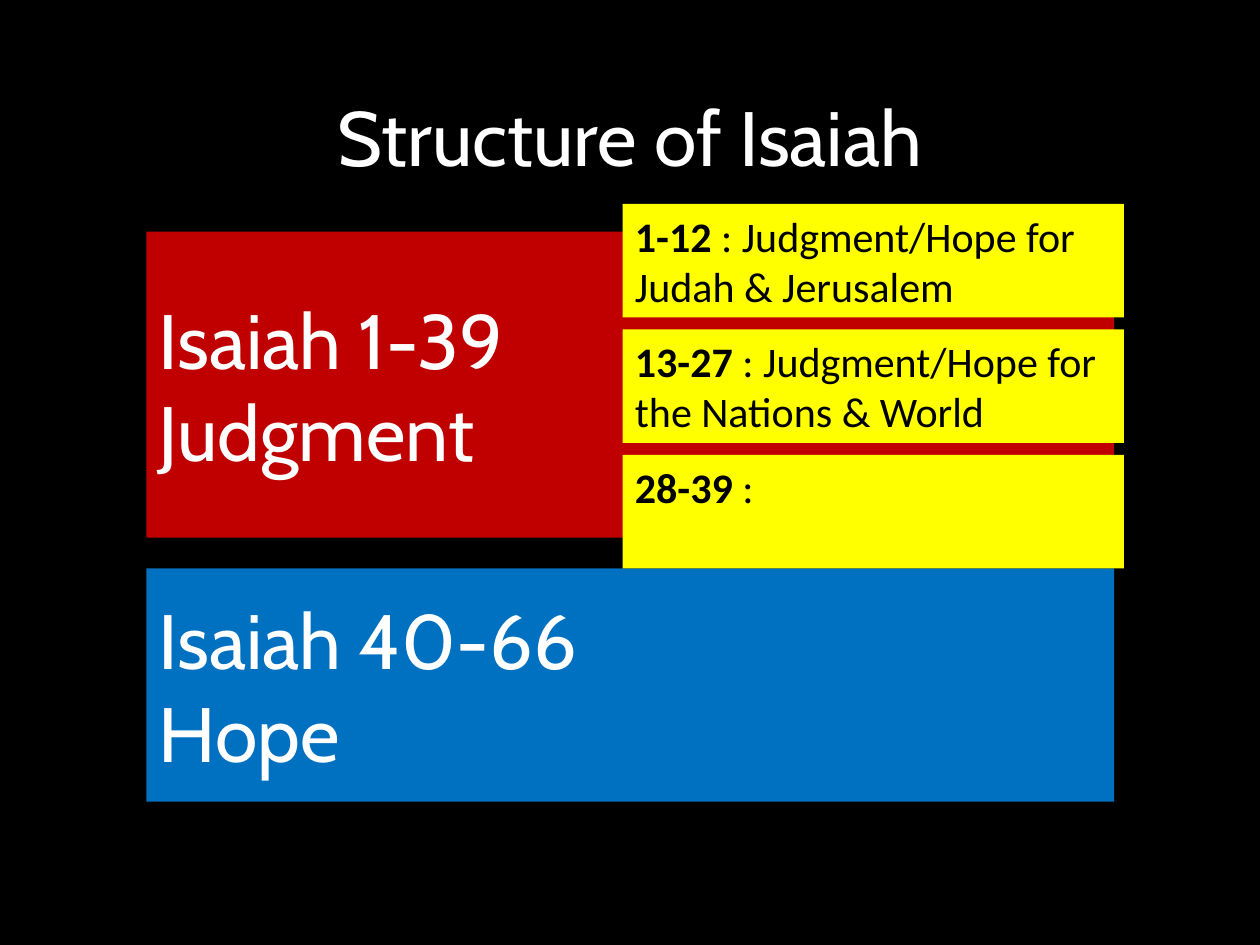
from pptx import Presentation
from pptx.dml.color import RGBColor as RGB
from pptx.enum.shapes import MSO_SHAPE as SHAPE
from pptx.enum.text import MSO_ANCHOR as ANCHOR, MSO_AUTO_SIZE as FIT, PP_ALIGN as ALIGN
from pptx.util import Cm, Pt

BLACK = RGB(0x00, 0x00, 0x00)
WHITE = RGB(0xFF, 0xFF, 0xFF)
RED = RGB(0xC0, 0x00, 0x00)
BLUE = RGB(0x00, 0x70, 0xC0)
YELLOW = RGB(0xFF, 0xFF, 0x00)

LARGE = {"name": "Cabin", "size": Pt(44), "color": WHITE}
SMALL = {"name": "Calibri", "size": Pt(24), "color": BLACK}


def write(para, text, style, bold=False):
    run = para.add_run()
    run.text = text
    for key, value in {**style, "bold": bold}.items():
        if key == "color":
            run.font.color.rgb = value
        else:
            setattr(run.font, key, value)


def block(left, top, width, height, color, anchor):
    box = slide.shapes.add_shape(SHAPE.RECTANGLE, Cm(left), Cm(top), Cm(width), Cm(height))
    box.shadow.inherit = False
    box.fill.solid()
    box.fill.fore_color.rgb = color
    box.line.fill.background()
    frame = box.text_frame
    form = {"word_wrap": True, "auto_size": FIT.NONE, "vertical_anchor": anchor}
    for key, value in form.items():
        setattr(frame, key, value)
    return frame


deck = Presentation()
deck.slide_width, deck.slide_height = Cm(25.4), Cm(19.05)
slide = deck.slides.add_slide(deck.slide_layouts[5])
slide.background.fill.solid()
slide.background.fill.fore_color.rgb = BLACK

title = slide.shapes.title
place = {"left": Cm(1.75), "top": Cm(1.02), "width": Cm(21.9), "height": Cm(3.68)}
for key, value in place.items():
    setattr(title, key, value)
title.text_frame.vertical_anchor = ANCHOR.MIDDLE
head = title.text_frame.paragraphs[0]
head.alignment = ALIGN.CENTER
head.line_spacing = 0.9
write(head, "Structure of Isaiah", LARGE)

halves = [
    (4.67, 6.17, RED, ["Isaiah 1-39", "Judgment"]),
    (11.46, 4.7, BLUE, ["Isaiah 40-66", "Hope"]),
]
for top, height, color, lines in halves:
    frame = block(2.95, top, 19.51, height, color, ANCHOR.MIDDLE)
    frame.text = "\n".join([""] * len(lines))
    for para, line in zip(frame.paragraphs, lines):
        para.alignment = ALIGN.LEFT
        write(para, line, LARGE)

parts = [
    ("1-12", " : Judgment/Hope for Judah & Jerusalem"),
    ("13-27", " : Judgment/Hope for the Nations & World"),
    ("28-39", " :"),
]
for row, (verses, theme) in enumerate(parts):
    frame = block(12.55, 4.11 + 2.53 * row, 10.11, 2.29, YELLOW, ANCHOR.TOP)
    para = frame.paragraphs[0]
    para.alignment = ALIGN.LEFT
    write(para, verses, SMALL, True)
    write(para, theme, SMALL)

deck.save("out.pptx")
